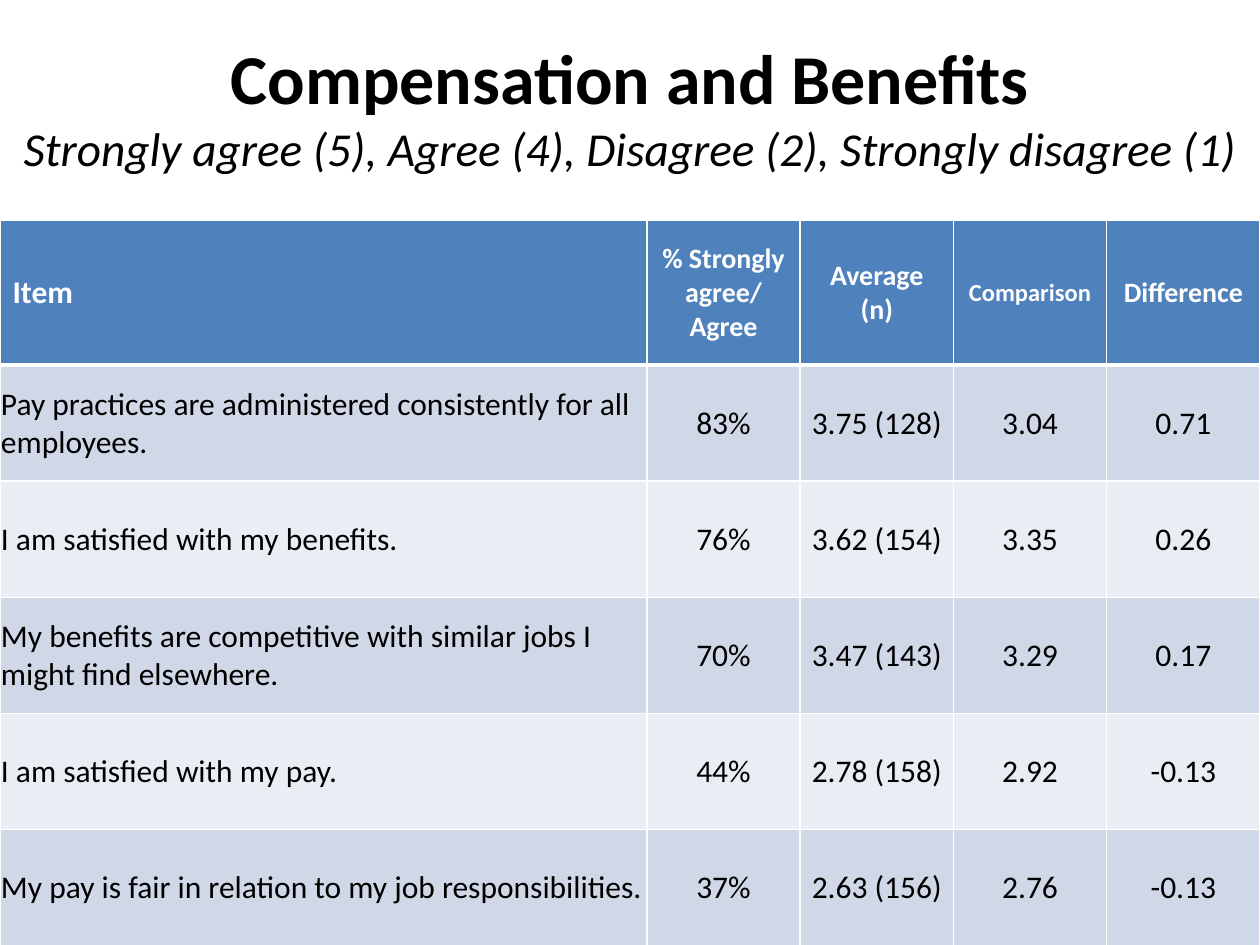
from copy import deepcopy

from lxml.etree import SubElement
from pptx import Presentation
from pptx.dml.color import RGBColor
from pptx.enum.text import MSO_ANCHOR, MSO_AUTO_SIZE, PP_ALIGN
from pptx.oxml.ns import qn
from pptx.util import Cm, Pt

COLORS = {
    "text": "000000",
    "white": "FFFFFF",
    "header": "4F81BD",
    "odd_row": "D0D8E8",
    "even_row": "E9EDF4",
}
FONT = "Calibri"
HEADERS = ["Item", "% Strongly agree/ Agree", "Average (n)", "Comparison", "Difference"]
HEADER_SIZES = [18, 16, 16, 14, 16]
RESULTS = [
    ["Pay practices are administered consistently for all employees.",
     "83%", "3.75 (128)", "3.04", "0.71"],
    ["I am satisfied with my benefits.", "76%", "3.62 (154)", "3.35", "0.26"],
    ["My benefits are competitive with similar jobs I might find elsewhere.",
     "70%", "3.47 (143)", "3.29", "0.17"],
    ["I am satisfied with my pay.", "44%", "2.78 (158)", "2.92", "-0.13"],
    ["My pay is fair in relation to my job responsibilities.",
     "37%", "2.63 (156)", "2.76", "-0.13"],
]
COLUMN_WIDTHS = [13.04] + [3.09] * 4
ROW_HEIGHTS = [2.92] + [2.34] * len(RESULTS)


def rgb(name):
    return RGBColor.from_string(COLORS[name])


def format_run(run, size, color, bold=False, italic=False):
    run.font.name = FONT
    run.font.size = Pt(size)
    run.font.bold = bold
    run.font.italic = italic
    run.font.color.rgb = rgb(color)


def add_title(slide, heading, scale):
    title = slide.shapes.title
    title.left, title.top, title.width, title.height = Cm(0), Cm(0), Cm(25.4), Cm(4.24)
    frame = title.text_frame
    frame.auto_size = MSO_AUTO_SIZE.NONE
    frame.word_wrap = True
    frame.vertical_anchor = MSO_ANCHOR.MIDDLE
    paragraph = frame.paragraphs[0]
    paragraph.text = f"{heading}\v{scale}"
    paragraph.alignment = PP_ALIGN.CENTER
    heading_run, scale_run = paragraph.runs
    format_run(heading_run, 40, "text", bold=True)
    format_run(scale_run, 27, "text", italic=True)
    # The line break takes the heading's size, so it does not stretch the line.
    line_break = paragraph._p.find(qn("a:br"))
    line_break.append(deepcopy(heading_run.font._element))


def set_borders(cell, top, bottom):
    """Draw white borders; top and bottom are widths in points."""
    properties = cell._tc.get_or_add_tcPr()
    for side, width in (("L", 1), ("R", 1), ("T", top), ("B", bottom)):
        line = SubElement(properties, qn(f"a:ln{side}"), w=str(Pt(width)))
        fill = SubElement(line, qn("a:solidFill"))
        SubElement(fill, qn("a:srgbClr"), val=COLORS["white"])


def fill_cell(cell, text, column, size, color, background, bold=False):
    cell.fill.solid()
    cell.fill.fore_color.rgb = rgb(background)
    cell.vertical_anchor = MSO_ANCHOR.MIDDLE
    paragraph = cell.text_frame.paragraphs[0]
    paragraph.text = text
    paragraph.alignment = PP_ALIGN.CENTER if column else PP_ALIGN.LEFT
    format_run(paragraph.runs[0], size, color, bold)


def add_results_table(slide):
    table = slide.shapes.add_table(
        len(ROW_HEIGHTS), len(COLUMN_WIDTHS), Cm(0), Cm(4.44),
        Cm(sum(COLUMN_WIDTHS)), Cm(sum(ROW_HEIGHTS))).table
    for column, width in zip(table.columns, COLUMN_WIDTHS):
        column.width = Cm(width)
    for row, height in zip(table.rows, ROW_HEIGHTS):
        row.height = Cm(height)

    for column, (label, size) in enumerate(zip(HEADERS, HEADER_SIZES)):
        cell = table.cell(0, column)
        set_borders(cell, top=1, bottom=3)
        fill_cell(cell, label, column, size, "white", "header", bold=True)

    for row, result in enumerate(RESULTS, start=1):
        background = "odd_row" if row % 2 else "even_row"
        for column, value in enumerate(result):
            cell = table.cell(row, column)
            set_borders(cell, top=3 if row == 1 else 1, bottom=1)
            cell.margin_left = cell.margin_right = cell.margin_top = Cm(0.02)
            cell.margin_bottom = Cm(0)
            fill_cell(cell, value, column, 18, "text", background)


def main():
    presentation = Presentation()
    presentation.slide_width, presentation.slide_height = Cm(25.4), Cm(19.05)
    slide = presentation.slides.add_slide(presentation.slide_layouts[5])
    add_title(slide, "Compensation and Benefits",
              "Strongly agree (5), Agree (4), Disagree (2), Strongly disagree (1)")
    add_results_table(slide)
    presentation.save("out.pptx")


if __name__ == "__main__":
    main()
